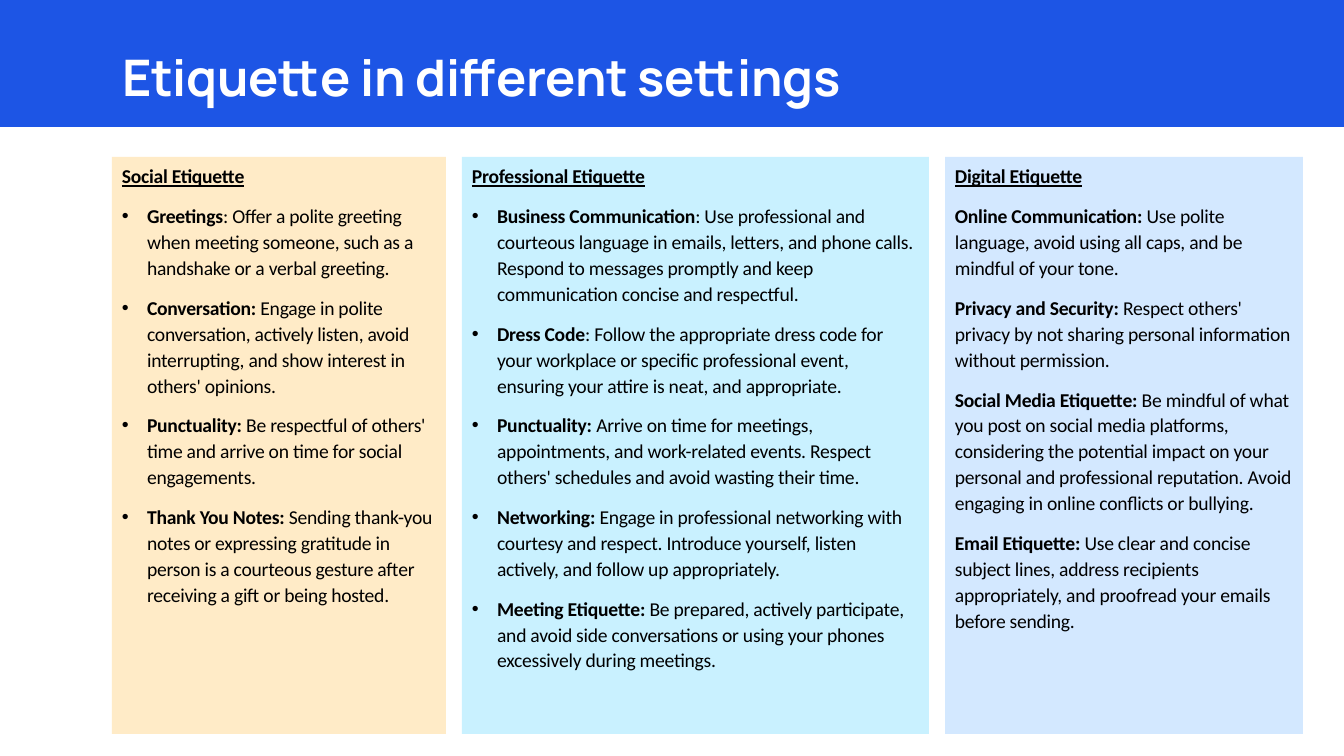
from pptx import Presentation, util as u
from pptx.dml.color import RGBColor
from pptx.enum import shapes, text
from pptx.oxml.ns import qn
from lxml import etree

PX = 914400 / 100.8


def paint(box, x, y, w, h, fill=None):
    """Place a shape in px and, if asked, fill it without an outline."""
    box.left, box.top, box.width, box.height = [u.Emu(round(n * PX)) for n in (x, y, w, h)]
    if fill:
        box.shadow.inherit = False
        box.fill.solid()
        box.fill.fore_color.rgb = RGBColor.from_string(fill)
        box.line.fill.background()


def write(para, words, size, face, color, bold=True, under=False):
    run = para.add_run()
    run.text = words
    font = run.font
    font.size, font.name = u.Pt(size), face
    font.bold, font.underline = bold, under
    font.color.rgb = RGBColor.from_string(color)
    font._element.set("spc", "-20")


# Slide
prs = Presentation()
prs.slide_width, prs.slide_height = [u.Emu(round(n * PX)) for n in (1344, 756)]
slide = prs.slides.add_slide(prs.slide_layouts[5])

# Title on a blue band
title = slide.shapes.title
paint(title, 112, 33, 1107, 86)
frame = title.text_frame
frame.auto_size = text.MSO_AUTO_SIZE.NONE
frame.vertical_anchor = text.MSO_ANCHOR.MIDDLE
frame.paragraphs[0].alignment = text.PP_ALIGN.LEFT
write(frame.paragraphs[0], "Etiquette in different settings", 36, "Manrope", "FFFFFF")
band = slide.shapes.add_shape(shapes.MSO_SHAPE.RECTANGLE, 0, 0, 0, 0)
paint(band, 0, 0, 1344, 127, "1D55E5")
title.element.addprevious(band.element)

# Panels: heading, width, fill, bulleted, entries
panels = [
    ("Social Etiquette", 334, "FFEBC7", True, [
        ("Greetings", ": Offer a polite greeting when meeting someone, such as a handshake "
         "or a verbal greeting."),
        ("Conversation: ", "Engage in polite conversation, actively listen, avoid interrupting, "
         "and show interest in others' opinions."),
        ("Punctuality: ", "Be respectful of others' time and arrive on time for social "
         "engagements."),
        ("Thank You Notes: ", "Sending thank-you notes or expressing gratitude in person is a "
         "courteous gesture after receiving a gift or being hosted."),
    ]),
    ("Professional Etiquette", 467, "C9F1FF", True, [
        ("Business Communication", ": Use professional and courteous language in emails, "
         "letters, and phone calls. Respond to messages promptly and keep communication "
         "concise and respectful."),
        ("Dress Code", ": Follow the appropriate dress code for your workplace or specific "
         "professional event, ensuring your attire is neat, and appropriate."),
        ("Punctuality: ", "Arrive on time for meetings, appointments, and work-related events. "
         "Respect others' schedules and avoid wasting their time."),
        ("Networking: ", "Engage in professional networking with courtesy and respect. "
         "Introduce yourself, listen actively, and follow up appropriately."),
        ("Meeting Etiquette: ", "Be prepared, actively participate, and avoid side "
         "conversations or using your phones excessively during meetings."),
    ]),
    ("Digital Etiquette", 358, "D3E8FF", False, [
        ("Online Communication: ", "Use polite language, avoid using all caps, and be mindful "
         "of your tone."),
        ("Privacy and Security: ", "Respect others' privacy by not sharing personal information "
         "without permission."),
        ("Social Media Etiquette: ", "Be mindful of what you post on social media platforms, "
         "considering the potential impact on your personal and professional reputation. "
         "Avoid engaging in online conflicts or bullying."),
        ("Email Etiquette: ", "Use clear and concise subject lines, address recipients "
         "appropriately, and proofread your emails before sending."),
    ]),
]

left, gap = 112, 16
for head, wide, fill, dots, items in panels:
    panel = slide.shapes.add_shape(shapes.MSO_SHAPE.RECTANGLE, 0, 0, 0, 0)
    paint(panel, left, 157, wide, 577, fill)
    left += wide + gap
    frame = panel.text_frame
    frame.word_wrap = True
    frame.vertical_anchor = text.MSO_ANCHOR.TOP

    # Heading
    para = frame.paragraphs[0]
    para.alignment, para.line_spacing = text.PP_ALIGN.LEFT, 1.1
    write(para, head, 14, "Calibri", "000000", under=True)

    # Entries: bold lead, then plain text
    for lead, rest in items:
        para = frame.add_paragraph()
        para.alignment, para.line_spacing = text.PP_ALIGN.LEFT, 1.1
        para.space_before = u.Pt(10)
        if dots:
            props = para._p.get_or_add_pPr()
            props.set("marL", str(u.Inches(0.25)))
            props.set("indent", str(-u.Inches(0.25)))
            etree.SubElement(props, qn("a:buFont")).set("typeface", "Arial")
            etree.SubElement(props, qn("a:buChar")).set("char", "•")
        write(para, lead, 14, "Calibri", "000000")
        write(para, rest, 14, "Calibri", "000000", bold=False)

prs.save("out.pptx")
